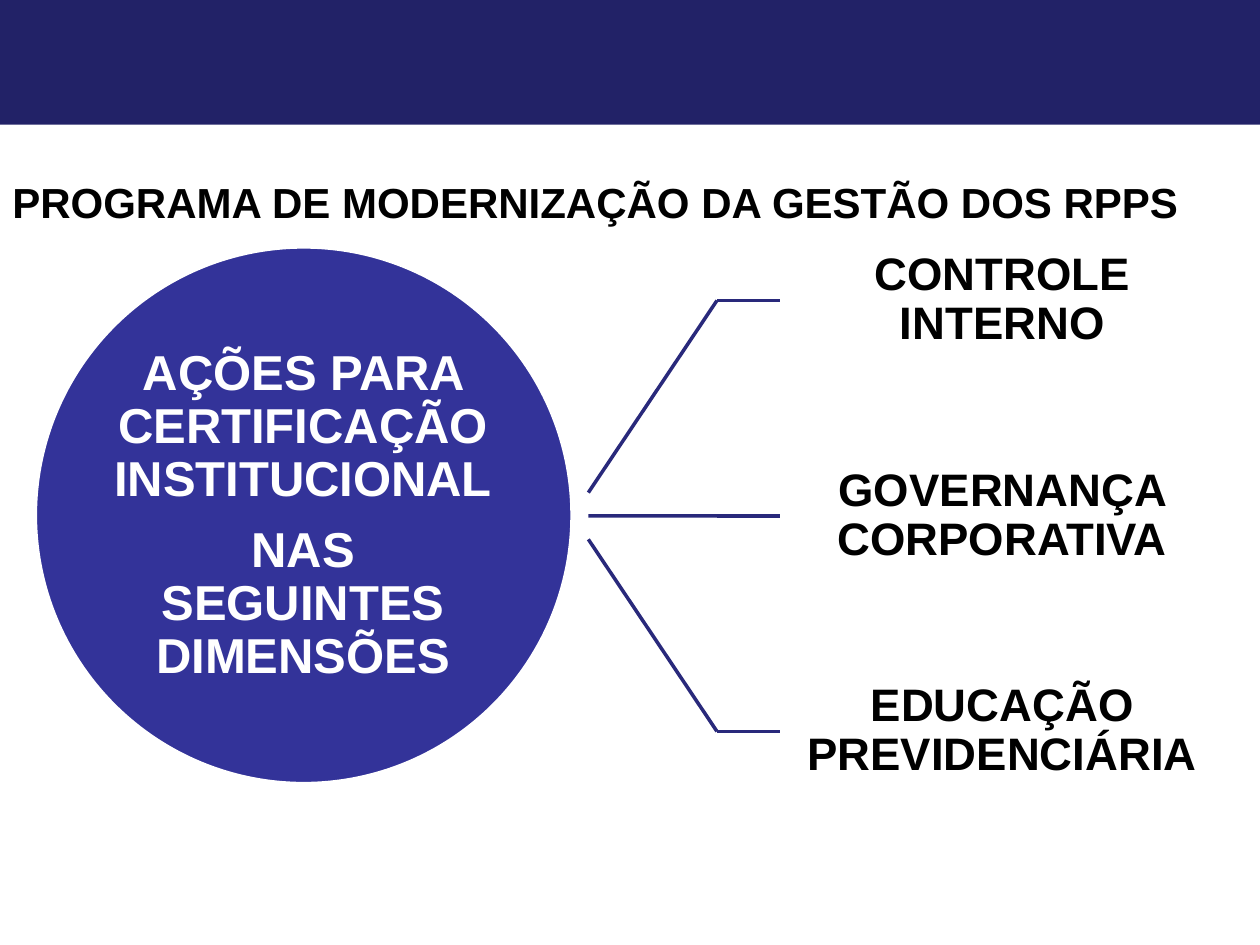
"""Build the slide on the modernisation programme and its three dimensions."""
from typing import NamedTuple

from lxml.etree import SubElement
from pptx import Presentation
from pptx.dml.color import RGBColor
from pptx.enum.shapes import MSO_CONNECTOR as Connector, MSO_SHAPE as Preset
from pptx.enum.text import MSO_ANCHOR as Anchor, PP_ALIGN as Align
from pptx.oxml.ns import qn
from pptx.util import Pt


class Frame(NamedTuple):
    left: float
    top: float
    width: float
    height: float


class Dimension(NamedTuple):
    label: str
    start_y: float


NAVY, INDIGO, LINE = "222267", "333399", "29297B"
WHITE, BLACK = "FFFFFF", "000000"
DIMENSIONS = [
    Dimension("CONTROLE INTERNO", 281.5),
    Dimension("GOVERNANÇA CORPORATIVA", 294.8),
    Dimension("EDUCAÇÃO PREVIDENCIÁRIA", 308.2),
]
LABELS = Frame(445.7, 110.2, 254.2, 123.1)
START_X, ELBOW_X = 336.2, 409.7


def colour(value: str) -> RGBColor:
    return RGBColor.from_string(value)


def points(frame: Frame) -> list:
    return [Pt(value) for value in frame]


def add_solid(page, preset, frame: Frame, fill: str, outline: str = ""):
    shape = page.shapes.add_shape(preset, *points(frame))
    shape.shadow.inherit = False
    shape.fill.solid()
    shape.fill.fore_color.rgb = colour(fill)
    if outline:
        shape.line.color.rgb = colour(outline)
        shape.line.width = Pt(2)
    else:
        shape.line.fill.background()
    return shape


def add_text(page, frame: Frame, lines: list, size: float, ink: str,
             frame_format: dict, para_format: dict, gap: float = 0):
    box = page.shapes.add_textbox(*points(frame))
    text = box.text_frame
    for name, value in {"word_wrap": True, **frame_format}.items():
        setattr(text, name, value)
    for index, line in enumerate(lines):
        para = text.paragraphs[0] if index == 0 else text.add_paragraph()
        for name, value in para_format.items():
            setattr(para, name, value)
        if index < len(lines) - 1:
            para.space_after = Pt(gap)
        span = para.add_run()
        span.text = line
        for name, value in {"name": "Arial", "size": Pt(size), "bold": True}.items():
            setattr(span.font, name, value)
        span.font.color.rgb = colour(ink)
    return box


def add_line(page, start: tuple, end: tuple):
    line = page.shapes.add_connector(
        Connector.STRAIGHT, *[Pt(value) for value in (*start, *end)])
    line.line.color.rgb = colour(LINE)
    line.line.width = Pt(2)
    SubElement(line._element.spPr, qn("a:effectLst"))
    return line


def middle(inset: float) -> dict:
    sides = ("left", "top", "right", "bottom")
    return {"vertical_anchor": Anchor.MIDDLE,
            **{f"margin_{side}": Pt(inset) for side in sides}}


def main() -> None:
    deck = Presentation()
    deck.slide_width, deck.slide_height = Pt(720), Pt(540)
    page = deck.slides.add_slide(deck.slide_layouts[6])
    centred = {"alignment": Align.CENTER, "line_spacing": 0.9}

    add_text(page, Frame(0, 69.8, 724.3, 94.3),
             ["PROGRAMA DE MODERNIZAÇÃO DA GESTÃO DOS RPPS"], 24, BLACK,
             {"margin_top": Pt(31.2)}, {})
    add_solid(page, Preset.OVAL, Frame(20.2, 141.1, 306.7, 306.7), INDIGO, WHITE)
    add_text(page, Frame(64.8, 186.5, 216.7, 216.7),
             ["AÇÕES PARA CERTIFICAÇÃO INSTITUCIONAL", "NAS SEGUINTES DIMENSÕES"],
             28, WHITE, middle(0), centred, gap=10.5)

    for row, dimension in enumerate(DIMENSIONS):
        frame = LABELS._replace(top=LABELS.top + row * LABELS.height)
        label = add_text(page, frame, [dimension.label], 26, BLACK,
                         middle(14.4), centred)
        centre_y = frame.top + frame.height / 2
        add_line(page, (START_X, dimension.start_y), (ELBOW_X, centre_y))
        add_line(page, (ELBOW_X, centre_y),
                 (frame.left, centre_y)).end_connect(label, 1)

    add_solid(page, Preset.RECTANGLE, Frame(-5, 0, 728.6, 71.3), NAVY)
    deck.save("out.pptx")


if __name__ == "__main__":
    main()
